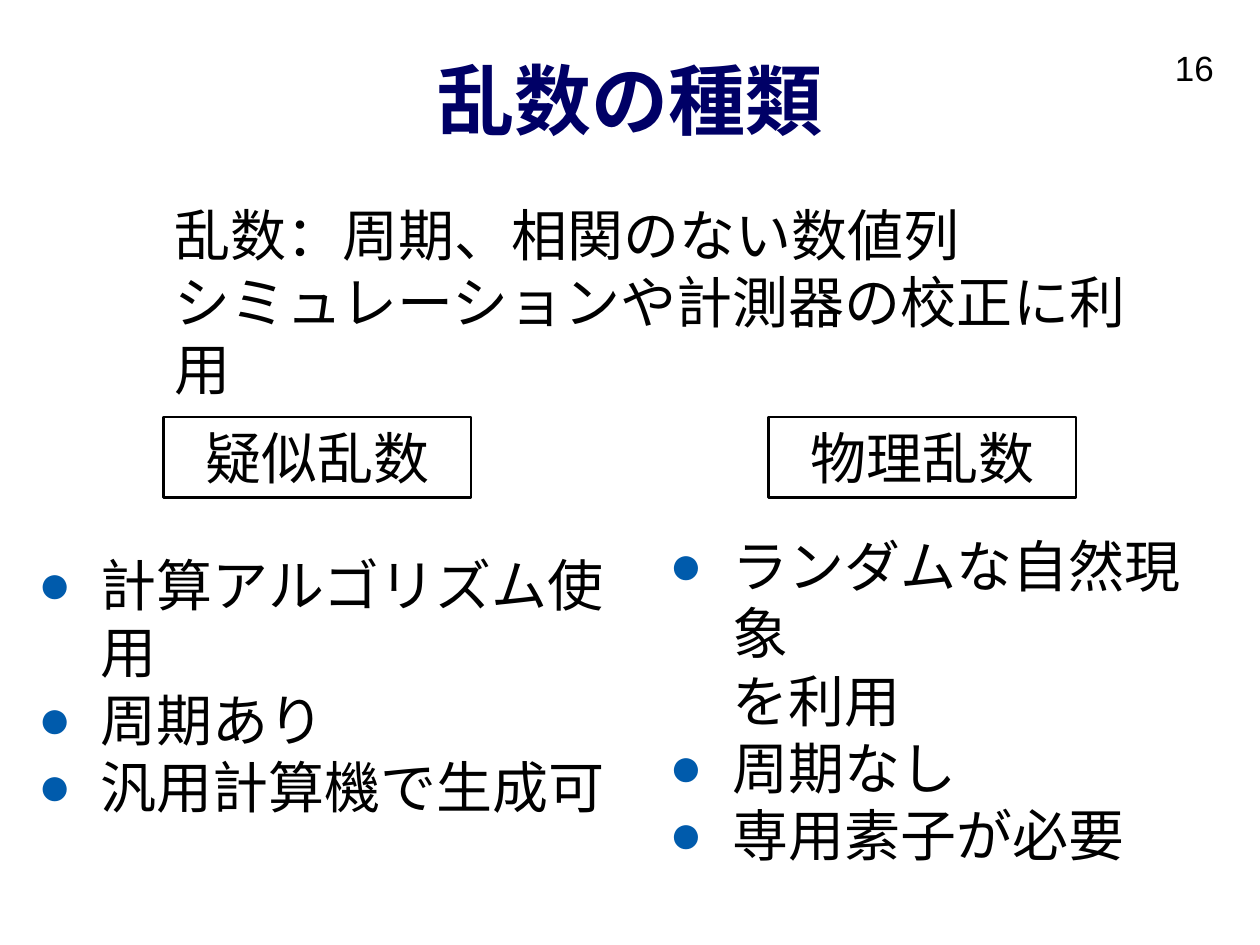
from dataclasses import dataclass

from lxml import etree
from pptx import Presentation
from pptx.dml.color import RGBColor
from pptx.enum.shapes import MSO_SHAPE
from pptx.enum.text import MSO_ANCHOR, MSO_AUTO_SIZE, PP_ALIGN
from pptx.oxml.ns import qn
from pptx.util import Inches, Pt

RECTANGLE = MSO_SHAPE.RECTANGLE
TOP, MIDDLE = MSO_ANCHOR.TOP, MSO_ANCHOR.MIDDLE
NO_FIT = MSO_AUTO_SIZE.NONE
LEFT, CENTER = PP_ALIGN.LEFT, PP_ALIGN.CENTER
TWO_CONTENT = 3


@dataclass(frozen=True)
class Theme:
    font: str = "Arial"
    ink: str = "000000"
    heading: str = "000066"
    bullet: str = "005BAC"
    title_size: int = 44
    body_size: int = 32
    number_size: int = 20
    outline: float = 1.5


class SlideBuilder:
    def __init__(self, slide, theme):
        self.slide = slide
        self.theme = theme

    def place(self, shape, area):
        shape.left, shape.top, shape.width, shape.height = map(Inches, area)

    def set_text(self, shape, lines, size, color=None, align=LEFT, anchor=TOP,
                 bold=False, wrap=True, bulleted=False):
        frame = shape.text_frame
        frame.word_wrap = wrap
        frame.auto_size = NO_FIT
        frame.vertical_anchor = anchor
        frame.text = "\n".join(lines)
        for para in frame.paragraphs:
            para.alignment = align
            para.space_before = Pt(0)
            if bulleted:
                self.add_bullet(para)
            para.font.name = self.theme.font
            para.font.size = Pt(size)
            para.font.bold = bold
            para.font.color.rgb = RGBColor.from_string(color or self.theme.ink)

    def add_bullet(self, para):
        properties = para._p.get_or_add_pPr()
        properties.set("marL", str(Inches(0.5)))
        properties.set("indent", str(Inches(-0.5)))
        color = etree.SubElement(properties, qn("a:buClr"))
        etree.SubElement(color, qn("a:srgbClr"), val=self.theme.bullet)
        etree.SubElement(properties, qn("a:buFont"), typeface=self.theme.font)
        etree.SubElement(properties, qn("a:buChar"), char="●")

    def title(self, text, area):
        shape = self.slide.shapes.title
        self.place(shape, area)
        self.set_text(shape, [text], self.theme.title_size, self.theme.heading,
                      CENTER, MIDDLE, bold=True)

    def text(self, text, area, size, align=LEFT, wrap=True):
        box = self.slide.shapes.add_textbox(*map(Inches, area))
        self.set_text(box, [text], size, align=align, wrap=wrap)

    def label(self, text, area):
        box = self.slide.shapes.add_shape(RECTANGLE, *map(Inches, area))
        box.shadow.inherit = False
        box.fill.background()
        box.line.color.rgb = RGBColor.from_string(self.theme.ink)
        box.line.width = Pt(self.theme.outline)
        self.set_text(box, [text], self.theme.body_size, align=CENTER)

    def bullets(self, index, items, area):
        shape = self.slide.placeholders[index]
        self.place(shape, area)
        self.set_text(shape, items, self.theme.body_size, bulleted=True)


def main():
    deck = Presentation()
    deck.slide_width, deck.slide_height = Inches(10), Inches(7.5)
    theme = Theme()
    page = SlideBuilder(deck.slides.add_slide(deck.slide_layouts[TWO_CONTENT]), theme)

    page.text("16", (9.21, 0.32, 0.54, 0.44), theme.number_size, CENTER, wrap=False)
    page.title("乱数の種類", (0.75, 0.16, 8.5, 1.25))
    page.text("乱数：周期、相関のない数値列\vシミュレーションや計測器の校正に利用",
              (1.29, 1.54, 7.8, 1.18), theme.body_size)

    columns = [
        ("疑似乱数", 1.3, (0.2, 4.32, 5.04, 1.72),
         ["計算アルゴリズム使用", "周期あり", "汎用計算機で生成可"]),
        ("物理乱数", 6.1, (5.21, 4.17, 4.6, 2.26),
         ["ランダムな自然現象\vを利用", "周期なし", "専用素子が必要"]),
    ]
    for index, (name, left, area, items) in enumerate(columns, start=1):
        page.label(name, (left, 3.31, 2.44, 0.64))
        page.bullets(index, items, area)

    deck.save("out.pptx")


if __name__ == "__main__":
    main()
